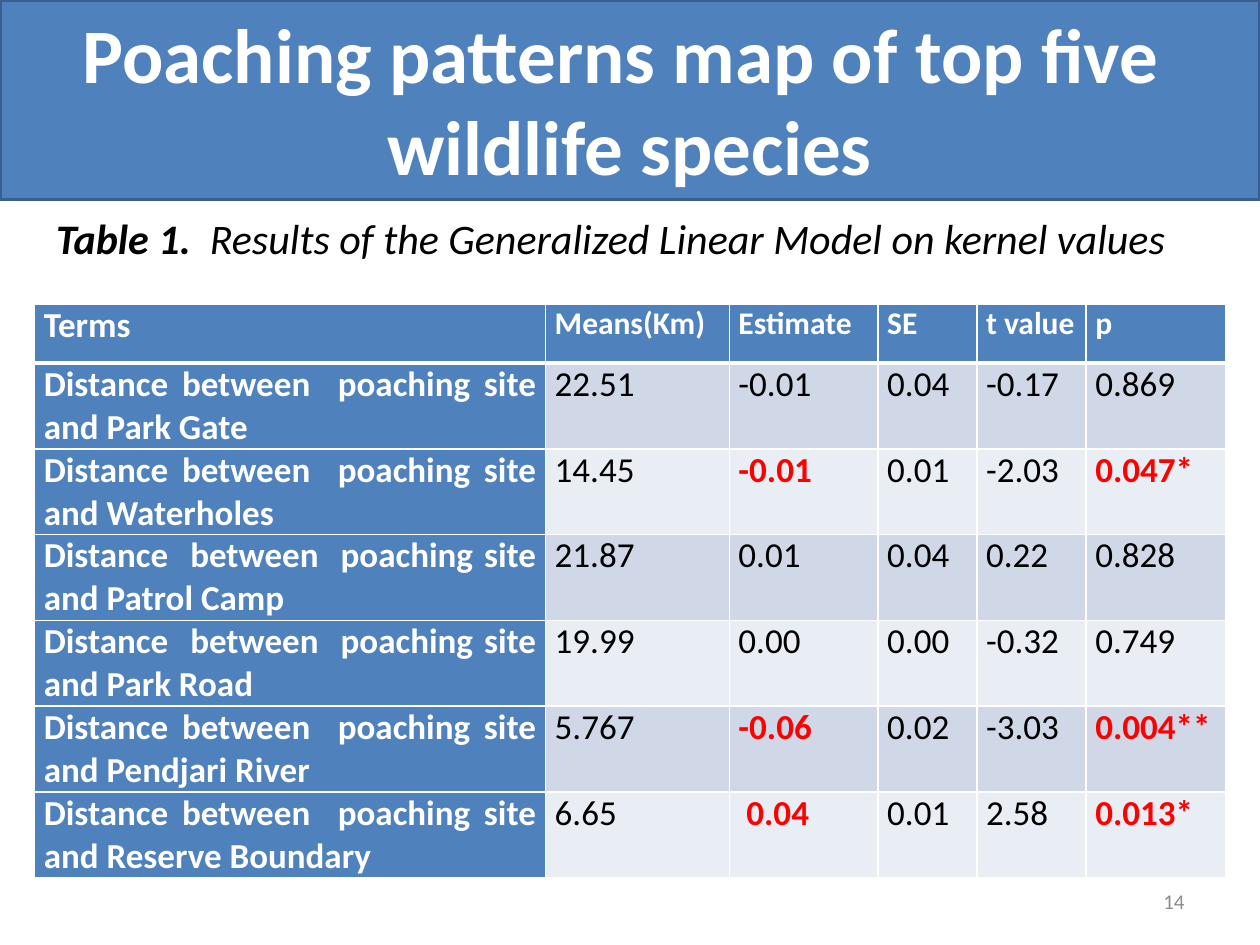
from lxml import etree
from pptx import Presentation
from pptx.dml.color import RGBColor
from pptx.enum import shapes, text
from pptx.oxml import ns
from pptx.util import Pt

BLUE = RGBColor(0x4F, 0x81, 0xBD)
DARK_BLUE = RGBColor(0x3A, 0x5F, 0x8C)
BAND_DARK = RGBColor(0xD0, 0xD8, 0xE8)
BAND_LIGHT = RGBColor(0xE9, 0xED, 0xF4)
WHITE = RGBColor(0xFF, 0xFF, 0xFF)
BLACK = RGBColor(0, 0, 0)
RED = RGBColor(0xFF, 0, 0)
GREY = RGBColor(0x8C, 0x8C, 0x8C)


def add_run(paragraph, words, size, color, bold=False, italic=False):
    run = paragraph.add_run()
    run.text = words
    run.font.name = "Calibri"
    run.font.size = Pt(size)
    run.font.color.rgb = color
    run.font.bold = bold
    run.font.italic = italic


def add_border(cell, side, width):
    props = cell._tc.get_or_add_tcPr()
    line = etree.Element(ns.qn(f"a:{side}"), w=str(Pt(width)))
    fill = etree.SubElement(line, ns.qn("a:solidFill"))
    etree.SubElement(fill, ns.qn("a:srgbClr"), val=str(WHITE))
    props.append(line)


deck = Presentation()
deck.slide_width, deck.slide_height = Pt(720), Pt(540)
slide = deck.slides.add_slide(deck.slide_layouts[6])

header = ["Terms", "Means(Km) ", "Estimate", "SE", "t value", "p"]
results = [
    ["Distance between  poaching site and Park Gate", "22.51", "-0.01", "0.04", "-0.17", "0.869"],
    ["Distance between  poaching site and Waterholes", "14.45", "-0.01", "0.01", "-2.03", "0.047*"],
    ["Distance  between  poaching site and Patrol Camp", "21.87", "0.01", "0.04", "0.22", "0.828"],
    ["Distance  between  poaching site and Park Road", "19.99", "0.00", "0.00", "-0.32", "0.749"],
    ["Distance between  poaching site and Pendjari River", "5.767", "-0.06", "0.02", "-3.03", "0.004**"],
    ["Distance between  poaching site and Reserve Boundary ", "6.65", " 0.04", "0.01", "2.58", "0.013*"],
]
column_widths = [292, 105, 85, 56.5, 62.5, 79.5]
row_heights = [33.5] + [49] * len(results)

model = slide.shapes.add_table(
    len(row_heights), len(column_widths), Pt(19.75), Pt(174),
    Pt(sum(column_widths)), Pt(sum(row_heights))).table
for column, width in zip(model.columns, column_widths):
    column.width = Pt(width)
for row, height in zip(model.rows, row_heights):
    row.height = Pt(height)

for r, values in enumerate([header] + results):
    significant = values[-1].endswith("*")
    for c, value in enumerate(values):
        cell = model.cell(r, c)
        heading = r == 0 or c == 0
        highlight = significant and c in (2, 5)
        cell.margin_left = cell.margin_right = Pt(5.25)
        cell.margin_top = cell.margin_bottom = 0
        for side in ("lnL", "lnR"):
            add_border(cell, side, 1)
        add_border(cell, "lnT", 3 if r == 1 else 1)
        add_border(cell, "lnB", 3 if r == 0 else 1)
        cell.fill.solid()
        cell.fill.fore_color.rgb = BLUE if heading else BAND_DARK if r % 2 else BAND_LIGHT
        paragraph = cell.text_frame.paragraphs[0]
        paragraph.alignment = text.PP_ALIGN.JUSTIFY
        add_run(paragraph, value, 18 if r == 0 and c else 20,
                WHITE if heading else RED if highlight else BLACK,
                bold=heading or highlight)

caption = slide.shapes.add_textbox(0, Pt(118), Pt(698), Pt(36)).text_frame
caption.word_wrap = True
caption.paragraphs[0].alignment = text.PP_ALIGN.CENTER
add_run(caption.paragraphs[0], "Table 1.  ", 24, BLACK, bold=True, italic=True)
add_run(caption.paragraphs[0], "Results of the Generalized Linear Model on kernel values",
        24, BLACK, italic=True)

banner = slide.shapes.add_shape(shapes.MSO_SHAPE.RECTANGLE, 0, 0, Pt(720), Pt(114))
banner.shadow.inherit = False
banner.fill.solid()
banner.fill.fore_color.rgb = BLUE
banner.line.color.rgb = DARK_BLUE
banner.line.width = Pt(2)
title = banner.text_frame
title.word_wrap = True
title.vertical_anchor = text.MSO_ANCHOR.TOP
title.paragraphs[0].alignment = text.PP_ALIGN.CENTER
add_run(title.paragraphs[0], "Poaching patterns map of top five  wildlife species",
        44, WHITE, bold=True)

page_number = slide.shapes.add_textbox(Pt(516), Pt(500.5), Pt(168), Pt(28.75)).text_frame
page_number.word_wrap = True
page_number.vertical_anchor = text.MSO_ANCHOR.MIDDLE
page_number.paragraphs[0].alignment = text.PP_ALIGN.RIGHT
add_run(page_number.paragraphs[0], "14", 12, GREY)

deck.save("out.pptx")
